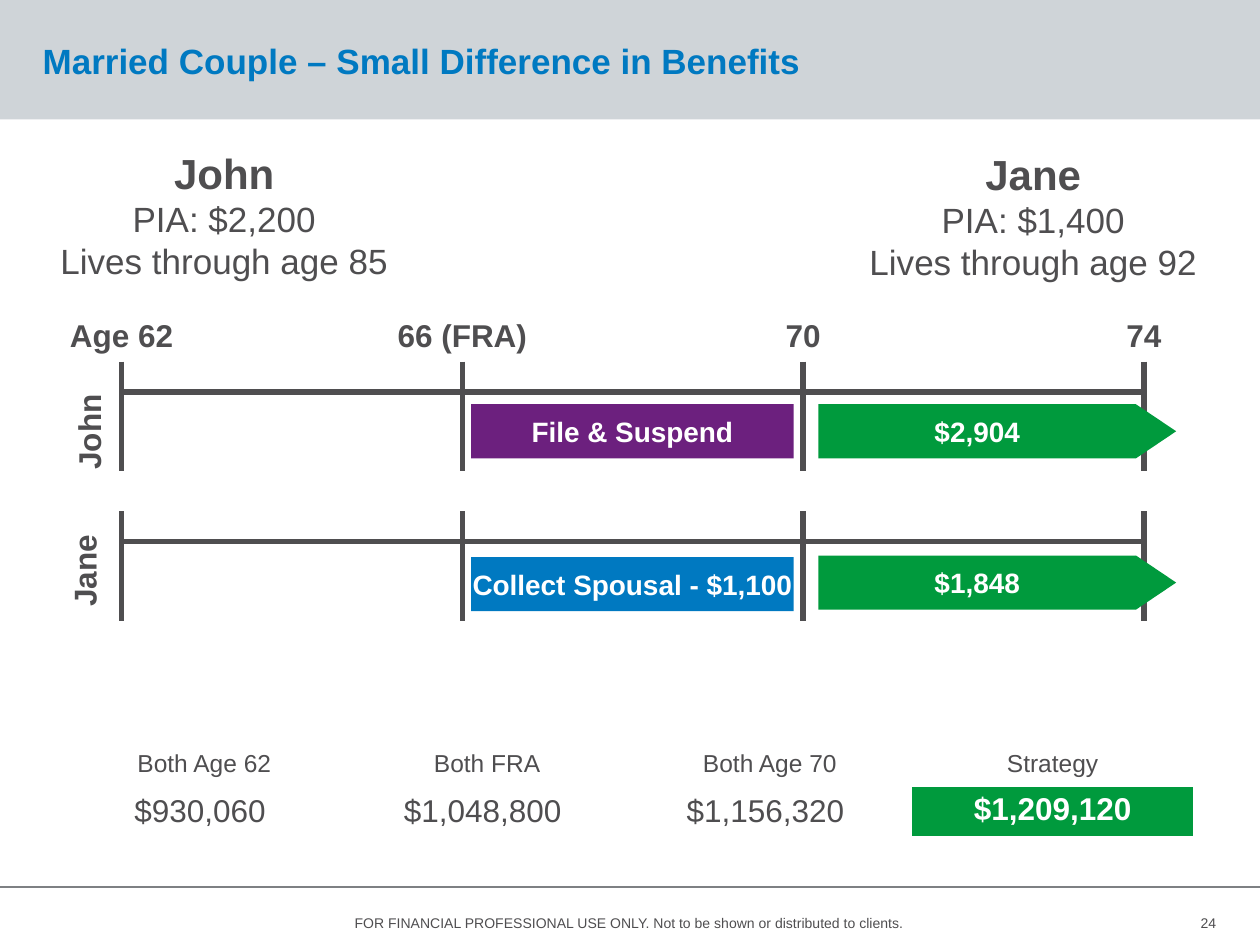
from dataclasses import dataclass

from lxml import etree
from pptx import Presentation
from pptx import util as u
from pptx.dml.color import RGBColor
from pptx.enum import shapes, text
from pptx.oxml import ns

Cm, Pt = u.Cm, u.Pt
Align, Anchor = text.PP_ALIGN, text.MSO_ANCHOR
Shape = shapes.MSO_SHAPE

FONT = "Arial"
GREY = RGBColor(0x4F, 0x4E, 0x50)
BAND = RGBColor(0xCF, 0xD4, 0xD8)
RULE = RGBColor(0x7E, 0x80, 0x83)
BLUE = RGBColor(0x00, 0x79, 0xC1)
PURPLE = RGBColor(0x6C, 0x20, 0x7E)
GREEN = RGBColor(0x00, 0x9A, 0x3D)
WHITE = RGBColor(0xFF, 0xFF, 0xFF)

# All lengths below are centimetres.
SLIDE_WIDTH, SLIDE_HEIGHT = 25.4, 19.05
AXIS_LEFT, AXIS_STEP = 2.45, 6.87
TICK_HEIGHT, AXIS_DROP = 2.21, 0.61
BAR_HEIGHT = 1.09
ARROW_LEFT, ARROW_DEPTH = 22.76, 0.81


@dataclass
class Box:
    left: float
    top: float
    width: float
    height: float

    def lengths(self) -> list[u.Length]:
        return [Cm(n) for n in (self.left, self.top, self.width, self.height)]


@dataclass
class Person:
    name: str
    details: list[str]
    box: Box


@dataclass
class Bar:
    label: str
    color: RGBColor
    box: Box
    arrow: bool = False


@dataclass
class Lane:
    name: str
    top: float
    label_box: Box
    bars: list[Bar]


@dataclass
class AgeMark:
    label: str
    width: float


@dataclass
class Outcome:
    heading: str
    amount: str
    best: bool = False


PEOPLE = [
    Person("John", ["PIA: $2,200", "Lives through age 85"], Box(0.94, 2.84, 7.16, 3)),
    Person("Jane", ["PIA: $1,400", "Lives through age 92"], Box(17.25, 2.87, 7.16, 3)),
]
AGES = [AgeMark("Age 62", 2.59), AgeMark("66 (FRA)", 5), AgeMark("70", 2.59), AgeMark("74", 2.59)]
LANES = [
    Lane("John", 7.29, Box(0.76, 8.2, 2.06, 1.02), [
        Bar("File & Suspend", PURPLE, Box(9.5, 8.15, 6.5, BAR_HEIGHT)),
        Bar("$2,904", GREEN, Box(16.5, 8.15, 6.4, BAR_HEIGHT), arrow=True),
    ]),
    Lane("Jane", 10.31, Box(0.71, 11, 1.98, 1.02), [
        Bar("Collect Spousal - $1,100", BLUE, Box(9.5, 11.23, 6.5, BAR_HEIGHT)),
        Bar("$1,848", GREEN, Box(16.5, 11.2, 6.4, BAR_HEIGHT), arrow=True),
    ]),
]
OUTCOMES = [
    Outcome("Both Age 62", "$930,060 "),
    Outcome("Both FRA", "$1,048,800 "),
    Outcome("Both Age 70", "$1,156,320 "),
    Outcome("Strategy", "$1,209,120", best=True),
]


def add_run(paragraph, words: str, size: float, color=GREY, bold=False) -> None:
    run = paragraph.add_run()
    run.text = words
    run.font.name, run.font.size, run.font.bold = FONT, Pt(size), bold
    run.font.color.rgb = color


def set_insets(target, horizontal: float, vertical: float) -> None:
    target.margin_left = target.margin_right = Cm(horizontal)
    target.margin_top = target.margin_bottom = Cm(vertical)


def add_text(slide, box: Box, words: str, size: float, color=GREY, bold=False,
             align=Align.CENTER, anchor=Anchor.TOP, wrap=True, inset=True):
    shape = slide.shapes.add_textbox(*box.lengths())
    frame = shape.text_frame
    frame.word_wrap = wrap
    frame.vertical_anchor = anchor
    if not inset:
        set_insets(frame, 0, 0)
    paragraph = frame.paragraphs[0]
    paragraph.alignment = align
    add_run(paragraph, words, size, color, bold)
    return shape


def add_filled(slide, kind, box: Box, color: RGBColor):
    shape = slide.shapes.add_shape(kind, *box.lengths())
    shape.shadow.inherit = False
    shape.fill.solid()
    shape.fill.fore_color.rgb = color
    shape.line.fill.background()
    return shape


def add_line(slide, x1: float, y1: float, x2: float, y2: float, color=GREY, width=3.0) -> None:
    line = slide.shapes.add_connector(
        shapes.MSO_CONNECTOR.STRAIGHT, Cm(x1), Cm(y1), Cm(x2), Cm(y2))
    line.line.color.rgb = color
    line.line.width = Pt(width)
    etree.SubElement(line._element.spPr, ns.qn("a:effectLst"))


def add_person(slide, person: Person) -> None:
    shape = add_text(slide, person.box, person.name, 24, bold=True, wrap=False)
    paragraph = shape.text_frame.paragraphs[0]
    for detail in person.details:
        paragraph.add_line_break()
        add_run(paragraph, detail, 20)


def add_bar(slide, bar: Bar) -> None:
    if bar.arrow:
        top = bar.box.top + (BAR_HEIGHT - ARROW_DEPTH) / 2
        tip = add_filled(slide, Shape.ISOSCELES_TRIANGLE,
                         Box(ARROW_LEFT, top, BAR_HEIGHT, ARROW_DEPTH), bar.color)
        tip.rotation = 90
    frame = add_filled(slide, Shape.RECTANGLE, bar.box, bar.color).text_frame
    frame.word_wrap = False
    frame.vertical_anchor = Anchor.MIDDLE
    set_insets(frame, 0.25, 0)
    frame.paragraphs[0].alignment = Align.CENTER
    add_run(frame.paragraphs[0], bar.label, 16, WHITE, True)


def add_lane(slide, lane: Lane, ticks: list[float]) -> None:
    axis = lane.top + AXIS_DROP
    add_line(slide, ticks[0], axis, ticks[-1], axis)
    for x in ticks:
        add_line(slide, x, lane.top, x, lane.top + TICK_HEIGHT)
    add_text(slide, lane.label_box, lane.name, 18, bold=True, wrap=False).rotation = 270
    for bar in lane.bars:
        add_bar(slide, bar)


def add_outcomes(slide) -> None:
    box = Box(1.27, 14.99, 22.8, 1.86)
    table = slide.shapes.add_table(2, len(OUTCOMES), *box.lengths()).table
    table.first_row = table.horz_banding = False
    table.rows[0].height, table.rows[1].height = Cm(0.84), Cm(1.02)
    for column, outcome in enumerate(OUTCOMES):
        table.columns[column].width = Cm(box.width / len(OUTCOMES))
        heading, amount = table.cell(0, column), table.cell(1, column)
        for cell in (heading, amount):
            cell.fill.background()
            set_insets(cell, 0.25, 0.13)
            cell.text_frame.paragraphs[0].alignment = Align.CENTER
        add_run(heading.text_frame.paragraphs[0], outcome.heading, 14)
        if outcome.best:
            amount.fill.solid()
            amount.fill.fore_color.rgb = GREEN
        else:
            set_insets(amount, 0, 0)
            amount.vertical_anchor = Anchor.MIDDLE
        add_run(amount.text_frame.paragraphs[0], outcome.amount, 18,
                WHITE if outcome.best else GREY, outcome.best)


def main() -> None:
    presentation = Presentation()
    presentation.slide_width, presentation.slide_height = Cm(SLIDE_WIDTH), Cm(SLIDE_HEIGHT)
    slide = presentation.slides.add_slide(presentation.slide_layouts[6])

    add_filled(slide, Shape.RECTANGLE, Box(0, -0.03, SLIDE_WIDTH, 2.44), BAND)
    title = add_text(slide, Box(0.86, 0.46, 23.6, 1.65),
                     "Married Couple – Small Difference in Benefits", 20, BLUE, True,
                     Align.LEFT, Anchor.MIDDLE, inset=False)
    title.text_frame.paragraphs[0].line_spacing = Pt(20)

    for person in PEOPLE:
        add_person(slide, person)
    ticks = [AXIS_LEFT + AXIS_STEP * index for index in range(len(AGES))]
    for age, x in zip(AGES, ticks):
        add_text(slide, Box(x - age.width / 2, 6.25, age.width, 1.02), age.label, 18, bold=True)
    for lane in LANES:
        add_lane(slide, lane, ticks)
    add_outcomes(slide)

    add_line(slide, 0, 17.88, SLIDE_WIDTH, 17.88, RULE, 0.75)
    add_text(slide, Box(4.17, 18.31, 17.04, 0.61),
             "FOR FINANCIAL PROFESSIONAL USE ONLY. Not to be shown or distributed to clients.", 8)
    add_text(slide, Box(23.5, 18.31, 1.02, 0.61), "24", 8,
             align=Align.RIGHT, anchor=Anchor.MIDDLE, inset=False)
    presentation.save("out.pptx")


if __name__ == "__main__":
    main()
